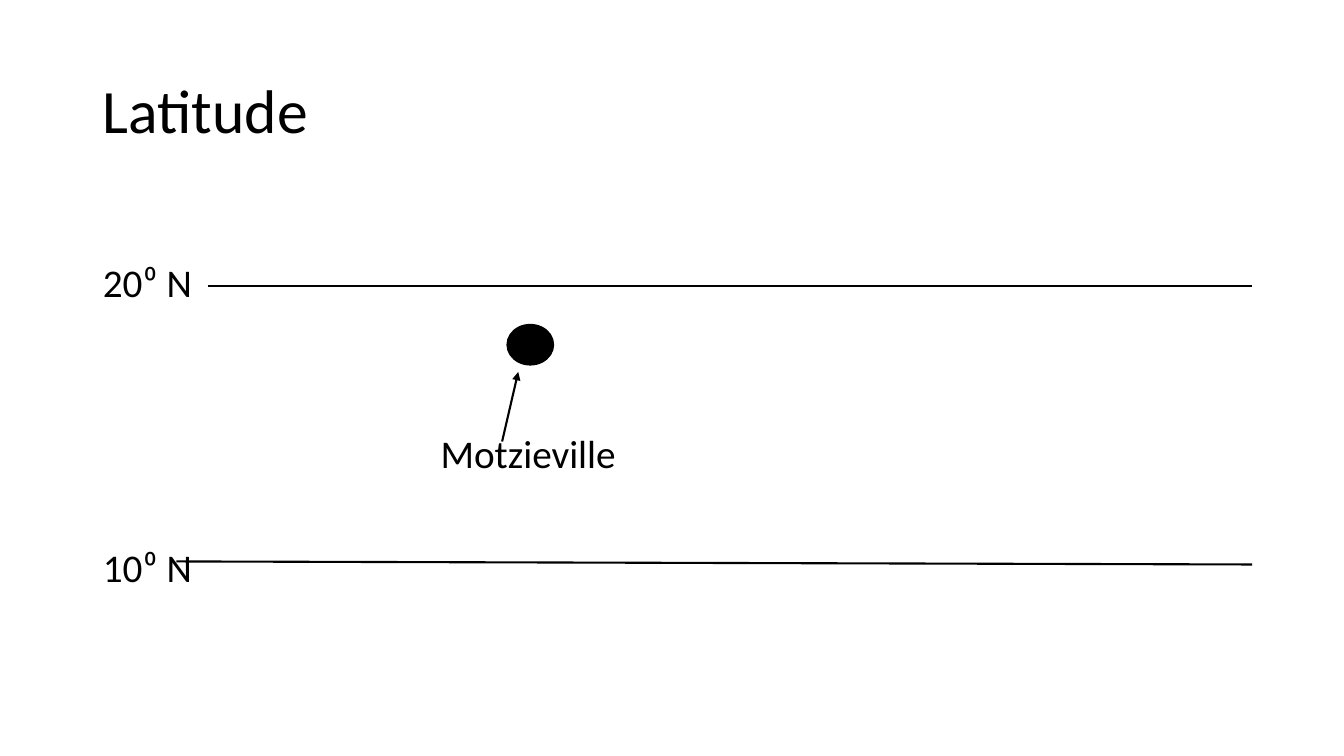
from lxml.etree import SubElement
from pptx import Presentation
from pptx.dml.color import RGBColor
from pptx.enum.shapes import MSO_CONNECTOR as Conn, MSO_SHAPE as Shape
from pptx.enum.text import MSO_ANCHOR as Anchor, MSO_AUTO_SIZE as Fit, PP_ALIGN as Align
from pptx.oxml.ns import qn
from pptx.util import Inches, Pt

WIDTH, HEIGHT = 13.33, 7.5
LEFT, RIGHT = 0.92, 12.42
INK = "000000"
LINE_HEIGHT = 30.8  # one 28 pt line at 0.9 spacing
ROW = LINE_HEIGHT + 10  # pitch of the text rows, in points


def color(hex_text):
    """Turn a hex string into a colour."""
    return RGBColor.from_string(hex_text)


def assign(obj, values):
    """Set attributes from a dict."""
    for name, value in values.items():
        setattr(obj, name, value)


def place(sp, left, top, width, height):
    """Move and size a shape, in inches."""
    box = dict(left=left, top=top, width=width, height=height)
    assign(sp, {name: Inches(value) for name, value in box.items()})


def write(p, text, size, before=0, indent=0):
    """Fill a left-aligned paragraph without a bullet."""
    r = p.add_run()
    r.text = text
    assign(p, dict(alignment=Align.LEFT, line_spacing=0.9, space_before=Pt(before)))
    assign(r.font, dict(name="Calibri", size=Pt(size)))
    r.font.color.rgb = color(INK)
    pPr = p._p.get_or_add_pPr()
    pPr.set("marL", str(Inches(indent)))
    pPr.set("indent", "0")
    SubElement(pPr, qn("a:buNone"))


def frame(sp, anchor, top_inset=0.05):
    """Set up a placeholder's text frame and return it."""
    tf = sp.text_frame
    assign(tf, dict(word_wrap=True, auto_size=Fit.NONE, vertical_anchor=anchor,
                    margin_top=Inches(top_inset)))
    return tf


def add_line(s, start, end, arrow=False):
    """Draw a straight line, with an arrowhead at its end if wanted."""
    line = s.shapes.add_connector(Conn.STRAIGHT, *map(Inches, start + end))
    line.line.color.rgb = color(INK)
    line.line.width = Pt(1.5)
    if arrow:
        SubElement(line.line._get_or_add_ln(), qn("a:tailEnd"), type="triangle")
    SubElement(line._element.spPr, qn("a:effectLst"))


def add_dot(s, *box):
    """Draw a solid ellipse."""
    dot = s.shapes.add_shape(Shape.OVAL, *map(Inches, box))
    dot.shadow.inherit = False
    dot.fill.solid()
    dot.fill.fore_color.rgb = dot.line.color.rgb = color(INK)
    dot.line.width = Pt(1)


def main():
    """Build the latitude slide."""
    prs = Presentation()
    assign(prs, dict(slide_width=Inches(WIDTH), slide_height=Inches(HEIGHT)))
    s = prs.slides.add_slide(prs.slide_layouts[1])
    title, body = s.placeholders

    place(title, LEFT, 0.4, RIGHT - LEFT, 1.45)
    write(frame(title, Anchor.MIDDLE).paragraphs[0], "Latitude", 44)

    place(body, LEFT, 2, RIGHT - LEFT, 4.76)
    tf = frame(body, Anchor.TOP, top_inset=0.62)
    labels = [("20⁰ N", 0, 0), ("Motzieville", 3, 3.35), ("10⁰ N", 2, 0)]
    for i, (text, rows_down, indent) in enumerate(labels):
        p = tf.add_paragraph() if i else tf.paragraphs[0]
        write(p, text, 28, max(0, rows_down * ROW - LINE_HEIGHT), indent)

    add_line(s, (2.06, 2.84), (RIGHT, 2.84))
    add_line(s, (1.75, 5.57), (RIGHT, 5.6))
    add_dot(s, 5.03, 3.22, 0.46, 0.4)
    add_line(s, (4.98, 4.38), (5.14, 3.69), arrow=True)
    prs.save("out.pptx")


main()
